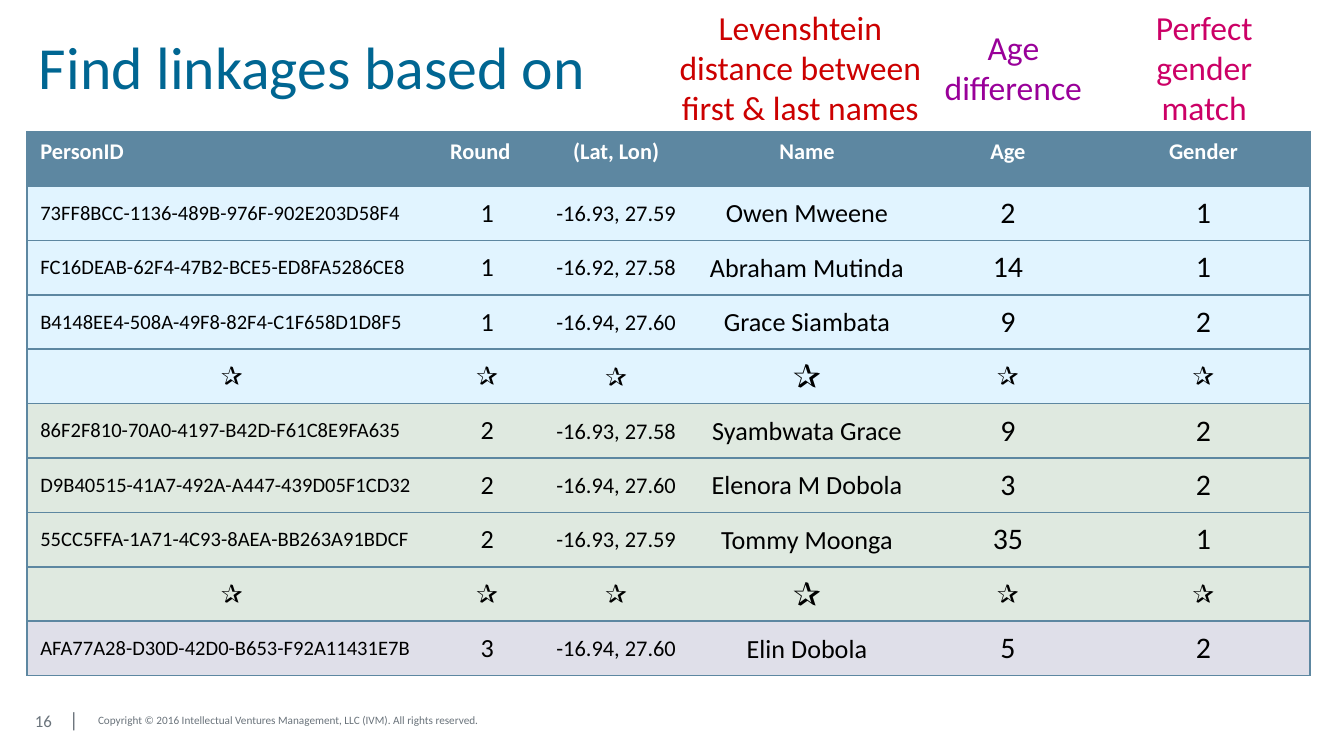
"""Build the slide that shows which survey fields link people across rounds."""
from dataclasses import dataclass
from typing import NamedTuple, Optional

from lxml import etree
from pptx import Presentation
from pptx import util as u
from pptx.dml import color
from pptx.enum import text
from pptx.oxml import ns

PX = 914400 // 200
FONT = "Calibri"
STAR = "✰"
PLAIN_TABLE = "{2D5ABB26-0587-4C30-8999-92F81FD0307C}"
COLORS = {
    "title": "006692", "names": "CC0000", "age": "990099", "gender": "CC0066",
    "footer": "6A737B", "rule": "5D87A1", "white": "FFFFFF", "black": "000000",
    "round1": "E1F4FF", "round2": "DFE9E0", "round3": "DFDFE9",
}
LEFT, CENTER = text.PP_ALIGN.LEFT, text.PP_ALIGN.CENTER
TOP, MIDDLE = text.MSO_ANCHOR.TOP, text.MSO_ANCHOR.MIDDLE


class Piece(NamedTuple):
    words: str
    size: int
    color: str
    bold: bool = False


class Insets(NamedTuple):
    left: int = 20
    top: int = 10
    right: int = 20
    bottom: int = 10


@dataclass(frozen=True)
class Label:
    left: int
    top: int
    width: int
    height: int
    pieces: tuple[Piece, ...]
    align: text.PP_ALIGN = LEFT
    anchor: text.MSO_ANCHOR = MIDDLE
    insets: Insets = Insets()
    grow: bool = False
    tab: Optional[int] = None


@dataclass(frozen=True)
class Field:
    heading: str
    width: int
    size: int
    heading_align: text.PP_ALIGN = CENTER
    align: text.PP_ALIGN = CENTER
    star_size: int = 14
    insets: Insets = Insets()


@dataclass(frozen=True)
class Round:
    number: str
    fill: str
    people: tuple[tuple[str, str, str, str, str], ...]
    continues: bool = True


TIGHT = Insets(2, 2, 2, 0)
FOOTER = Insets(12, 6, 12, 6)
TABLE_LEFT, TABLE_TOP, ROW_HEIGHT = 40, 196, 81

FIELDS = (
    Field("PersonID", 610, 11, heading_align=LEFT, align=LEFT),
    Field("Round", 150, 14, heading_align=LEFT),
    Field("(Lat, Lon)", 234, 12, insets=TIGHT),
    Field("Name", 334, 14, star_size=18, insets=TIGHT),
    Field("Age", 264, 16),
    Field("Gender", 318, 16),
)

ROUNDS = (
    Round("1", "round1", (
        ("73FF8BCC-1136-489B-976F-902E203D58F4", "-16.93, 27.59", "Owen Mweene", "2", "1"),
        ("FC16DEAB-62F4-47B2-BCE5-ED8FA5286CE8", "-16.92, 27.58", "Abraham Mutinda", "14", "1"),
        ("B4148EE4-508A-49F8-82F4-C1F658D1D8F5", "-16.94, 27.60", "Grace Siambata", "9", "2"),
    )),
    Round("2", "round2", (
        ("86F2F810-70A0-4197-B42D-F61C8E9FA635", "-16.93, 27.58", "Syambwata Grace", "9", "2"),
        ("D9B40515-41A7-492A-A447-439D05F1CD32", "-16.94, 27.60", "Elenora M Dobola", "3", "2"),
        ("55CC5FFA-1A71-4C93-8AEA-BB263A91BDCF", "-16.93, 27.59", "Tommy Moonga", "35", "1"),
    )),
    Round("3", "round3", (
        ("AFA77A28-D30D-42D0-B653-F92A11431E7B", "-16.94, 27.60", "Elin Dobola", "5", "2"),
    ), continues=False),
)

FOOTERS = (
    Label(40, 1030, 110, 82, (Piece("16\t", 9, "footer"), Piece("|", 11, "footer")),
          insets=FOOTER, tab=51),
    Label(134, 1052, 634, 60, (Piece(
        "Copyright © 2016 Intellectual Ventures Management, LLC (IVM). All rights reserved.",
        6, "footer"),), insets=FOOTER._replace(bottom=26)),
)

HEADLINES = (
    Label(966, 0, 450, 202,
          (Piece("Levenshtein distance between first & last names", 18, "names"),),
          CENTER, TOP, grow=True),
    Label(1350, 30, 316, 142, (Piece("Age difference", 18, "age"),), CENTER, TOP, grow=True),
    Label(1634, 0, 316, 202, (Piece("Perfect gender match", 18, "gender"),),
          CENTER, TOP, grow=True),
    Label(40, 30, 1910, 134, (Piece("Find linkages based on", 32, "title"),),
          insets=Insets(18, 9, 18, 9)),
)


def rgb(name: str) -> color.RGBColor:
    """Return the named colour."""
    return color.RGBColor.from_string(COLORS[name])


def add_piece(paragraph, piece: Piece) -> None:
    """Append one formatted run."""
    run = paragraph.add_run()
    run.text = piece.words
    run.font.name = FONT
    run.font.size = u.Pt(piece.size)
    run.font.bold = piece.bold
    run.font.color.rgb = rgb(piece.color)


def set_insets(holder, insets: Insets) -> None:
    """Set the four margins of a text frame or cell."""
    for side, length in insets._asdict().items():
        setattr(holder, f"margin_{side}", length * PX)


def draw_label(slide, label: Label) -> None:
    """Draw one text box."""
    box = slide.shapes.add_textbox(
        *(length * PX for length in (label.left, label.top, label.width, label.height)))
    frame = box.text_frame
    frame.word_wrap = True
    frame.auto_size = (text.MSO_AUTO_SIZE.SHAPE_TO_FIT_TEXT if label.grow
                       else text.MSO_AUTO_SIZE.NONE)
    frame.vertical_anchor = label.anchor
    set_insets(frame, label.insets)
    paragraph = frame.paragraphs[0]
    paragraph.alignment = label.align
    if label.tab is not None:
        stops = etree.SubElement(paragraph._p.get_or_add_pPr(), ns.qn("a:tabLst"))
        etree.SubElement(stops, ns.qn("a:tab"), pos=str(label.tab * PX), algn="l")
    for piece in label.pieces:
        add_piece(paragraph, piece)


def draw_cell(cell, piece: Piece, fill: str, align: text.PP_ALIGN,
              anchor: text.MSO_ANCHOR, insets: Insets, sides: str) -> None:
    """Fill one table cell and rule the given sides."""
    properties = cell._tc.get_or_add_tcPr()
    for side in sides:
        line = etree.SubElement(properties, ns.qn(f"a:ln{side}"), w=str(u.Pt(1)))
        solid = etree.SubElement(line, ns.qn("a:solidFill"))
        etree.SubElement(solid, ns.qn("a:srgbClr"), val=COLORS["rule"])
    cell.fill.solid()
    cell.fill.fore_color.rgb = rgb(fill)
    cell.vertical_anchor = anchor
    set_insets(cell, insets)
    paragraph = cell.text_frame.paragraphs[0]
    paragraph.alignment = align
    add_piece(paragraph, piece)


def draw_people(slide) -> None:
    """Draw the table of people grouped by round."""
    rows = [("rule", tuple(field.heading for field in FIELDS))]
    for group in ROUNDS:
        rows += [(group.fill, (person[0], group.number, *person[1:])) for person in group.people]
        if group.continues:
            rows.append((group.fill, (STAR,) * len(FIELDS)))
    width = sum(field.width for field in FIELDS)
    table = slide.shapes.add_table(
        len(rows), len(FIELDS), TABLE_LEFT * PX, TABLE_TOP * PX,
        width * PX, ROW_HEIGHT * len(rows) * PX).table
    table.first_row = table.horz_banding = False
    table._tbl.tblPr.find(ns.qn("a:tableStyleId")).text = PLAIN_TABLE
    for column, field in enumerate(FIELDS):
        table.columns[column].width = field.width * PX
        sides = {0: "LTB", len(FIELDS) - 1: "RTB"}.get(column, "TB")
        for row, (fill, values) in enumerate(rows):
            table.rows[row].height = ROW_HEIGHT * PX
            words = values[column]
            if row == 0:
                piece, align = Piece(words, 12, "white", True), field.heading_align
            elif words == STAR:
                piece, align = Piece(words, field.star_size, "black", True), CENTER
            else:
                piece, align = Piece(words, field.size, "black"), field.align
            draw_cell(table.cell(row, column), piece, fill, align, MIDDLE if row else TOP,
                      field.insets if row else Insets(), sides)


def main() -> None:
    """Build and save the slide."""
    deck = Presentation()
    deck.slide_width, deck.slide_height = 2000 * PX, 1125 * PX
    slide = deck.slides.add_slide(deck.slide_layouts[6])
    for footer in FOOTERS:
        draw_label(slide, footer)
    draw_people(slide)
    for headline in HEADLINES:
        draw_label(slide, headline)
    deck.save("out.pptx")


if __name__ == "__main__":
    main()
